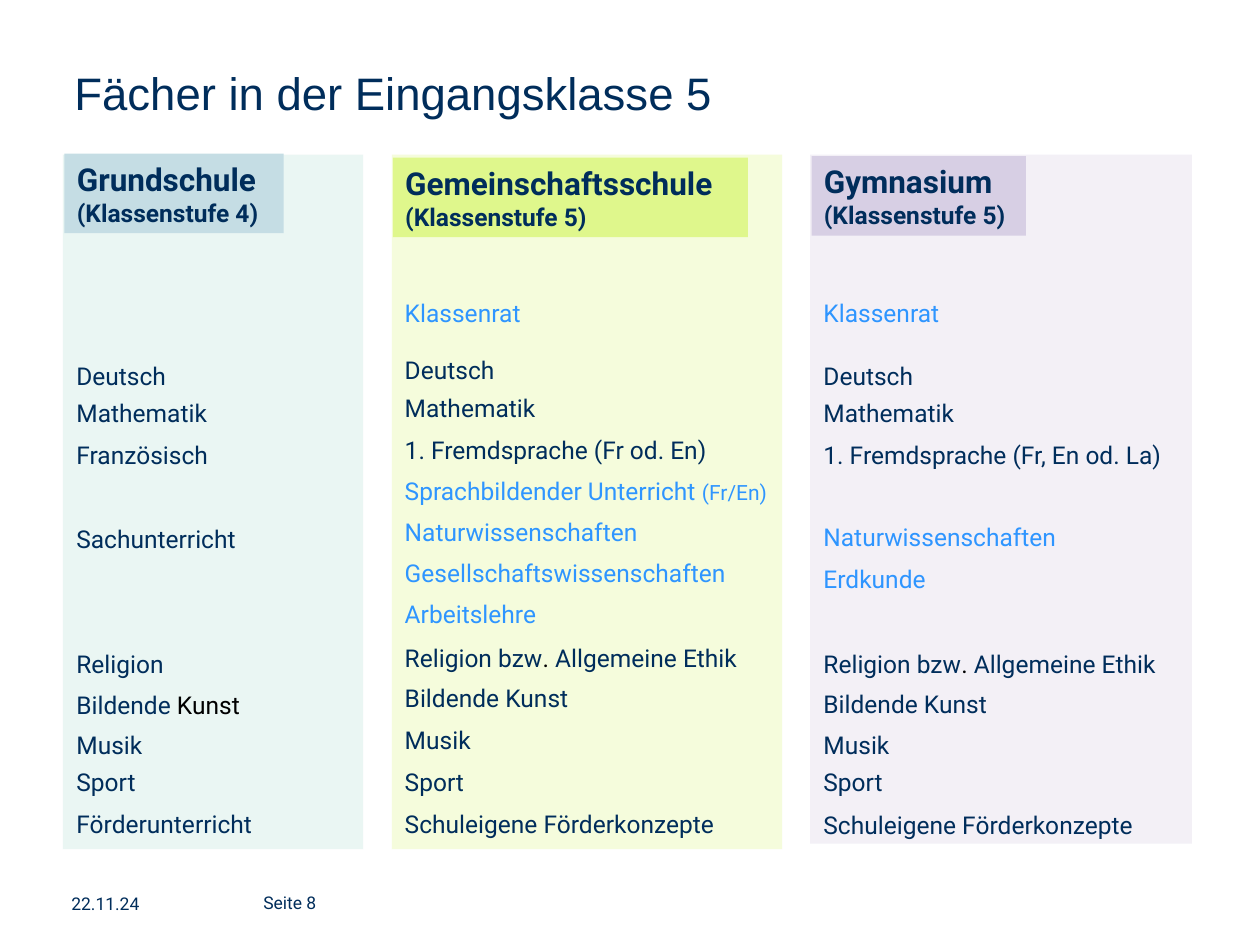
from lxml import etree
from pptx import Presentation
from pptx.dml.color import RGBColor
from pptx.enum.shapes import MSO_SHAPE as Shape
from pptx.enum.text import MSO_ANCHOR as Anchor, MSO_AUTO_SIZE as Auto, PP_ALIGN as Align
from pptx.oxml.ns import qn
from pptx.util import Cm, Pt

NAVY, BLUE, BLACK = "002D5B", "2E95FF", "000000"
FONT = "Roboto"
KLASSE_5 = "(Klassenstufe 5)"
ETHIK = [("Religion bzw", NAVY, 14), (". ", BLACK, 14), ("Allgemeine Ethik", NAVY, 14)]
SPRACHE = [("Sprachbildender Unterricht ", BLUE, 14), ("(Fr/En)", BLUE, 12)]
KUNST = [("Bildende", NAVY, 14), (" Kunst", BLACK, 14)]

COLUMNS = [
    dict(
        panel=(1.27, 3.12, 6.05, 14), tint="DDF0EC",
        head=(1.3, 3.1, 4.42, 1.6), tone="C5DDE4",
        title="Grundschule", level="(Klassenstufe 4)", left=1.29, width=5.92,
        rows=[
            (7.16, "Deutsch", NAVY), (7.9, "Mathematik", NAVY),
            (8.74, "Französisch", NAVY), (10.44, "Sachunterricht", NAVY),
            (12.95, "Religion", NAVY), (13.79, KUNST, NAVY), (14.6, "Musik", NAVY),
            (15.34, "Sport", NAVY), (16.18, "Förderunterricht", NAVY),
        ],
    ),
    dict(
        panel=(7.9, 3.12, 7.87, 14), tint="EFFBC6",
        head=(7.92, 3.18, 7.16, 1.6), tone="DFF78C",
        title="Gemeinschaftsschule", level=KLASSE_5, left=7.91, width=7.95,
        rows=[
            (5.89, "Klassenrat", BLUE), (7.04, "Deutsch", NAVY),
            (7.8, "Mathematik", NAVY), (8.64, "1. Fremdsprache (Fr od. En)", NAVY),
            (9.47, SPRACHE, BLUE), (10.29, "Naturwissenschaften", BLUE),
            (11.13, "Gesellschaftswissenschaften", BLUE), (11.96, "Arbeitslehre", BLUE),
            (12.83, ETHIK, NAVY), (13.64, "Bildende Kunst", NAVY), (14.5, "Musik", NAVY),
            (15.34, "Sport", NAVY), (16.18, "Schuleigene Förderkonzepte", NAVY),
        ],
    ),
    dict(
        panel=(16.33, 3.12, 7.7, 13.89), tint="EBE7F1",
        head=(16.36, 3.15, 4.32, 1.6), tone="D7CFE4",
        title="Gymnasium", level=KLASSE_5, left=16.35, width=7.75,
        rows=[
            (5.89, "Klassenrat", BLUE), (7.16, "Deutsch", NAVY),
            (7.9, "Mathematik", NAVY), (8.74, "1. Fremdsprache (Fr, En od. La)", NAVY),
            (10.39, "Naturwissenschaften", BLUE), (11.25, "Erdkunde", BLUE),
            (12.95, ETHIK, NAVY), (13.77, "Bildende Kunst", NAVY), (14.6, "Musik", NAVY),
            (15.34, "Sport", NAVY), (16.2, "Schuleigene Förderkonzepte", NAVY),
        ],
    ),
]


def paint(target, code):
    target.rgb = RGBColor.from_string(code)


def style(run, size, code, bold=False, face=FONT):
    run.font.name = face
    run.font.size = Pt(size)
    run.font.bold = bold
    paint(run.font.color, code)


def clear(frame):
    frame.margin_left = frame.margin_right = 0
    frame.margin_top = frame.margin_bottom = 0


def add_block(shapes, place, code, alpha=None):
    block = shapes.add_shape(Shape.RECTANGLE, *map(Cm, place))
    block.shadow.inherit = False
    block.line.fill.background()
    block.fill.solid()
    paint(block.fill.fore_color, code)
    if alpha:
        tint = block.fill._xPr.find(qn("a:solidFill"))[0]
        etree.SubElement(tint, qn("a:alpha")).set("val", str(alpha * 1000))
    return block


def add_head(shapes, col):
    frame = add_block(shapes, col["head"], col["tone"]).text_frame
    frame.text = col["title"] + "\n" + col["level"]
    frame.vertical_anchor = Anchor.TOP
    for par, size in zip(frame.paragraphs, (18, 14)):
        par.alignment = Align.LEFT
        style(par.runs[0], size, NAVY, True)


def add_text(shapes, place, parts):
    frame = shapes.add_textbox(*map(Cm, place)).text_frame
    frame.word_wrap = True
    for text, code, size in parts:
        run = frame.paragraphs[0].add_run()
        run.text = text
        style(run, size, code)
    return frame


def add_column(slide, col):
    shapes = slide.shapes.add_group_shape().shapes
    add_block(shapes, col["panel"], col["tint"], 60)
    add_head(shapes, col)
    for top, text, code in col["rows"]:
        parts = [(text, code, 14)] if isinstance(text, str) else text
        add_text(shapes, (col["left"], top, col["width"], 0.84), parts)


def set_title(slide, text):
    title = slide.shapes.title
    title.left, title.top, title.width, title.height = map(Cm, (1.5, 1.47, 22.4, 2.26))
    frame = title.text_frame
    frame.text = text
    clear(frame)
    frame.auto_size = Auto.NONE
    frame.vertical_anchor = Anchor.TOP
    par = frame.paragraphs[0]
    par.alignment = Align.LEFT
    par.line_spacing = 0.85
    style(par.runs[0], 26, NAVY, face="Arial")


def main():
    deck = Presentation()
    deck.slide_width, deck.slide_height = Cm(25.4), Cm(19.05)
    slide = deck.slides.add_slide(deck.slide_layouts[5])
    set_title(slide, "Fächer in der Eingangsklasse 5")
    for col in COLUMNS:
        add_column(slide, col)
    add_text(slide.shapes, (1.19, 17.88, 3.2, 0.61), [("22.11.24", NAVY, 10)])
    page = add_text(slide.shapes, (5.31, 17.88, 3.2, 0.61), [("Seite 8", NAVY, 10)])
    clear(page)
    page.vertical_anchor = Anchor.MIDDLE
    deck.save("out.pptx")


if __name__ == "__main__":
    main()
